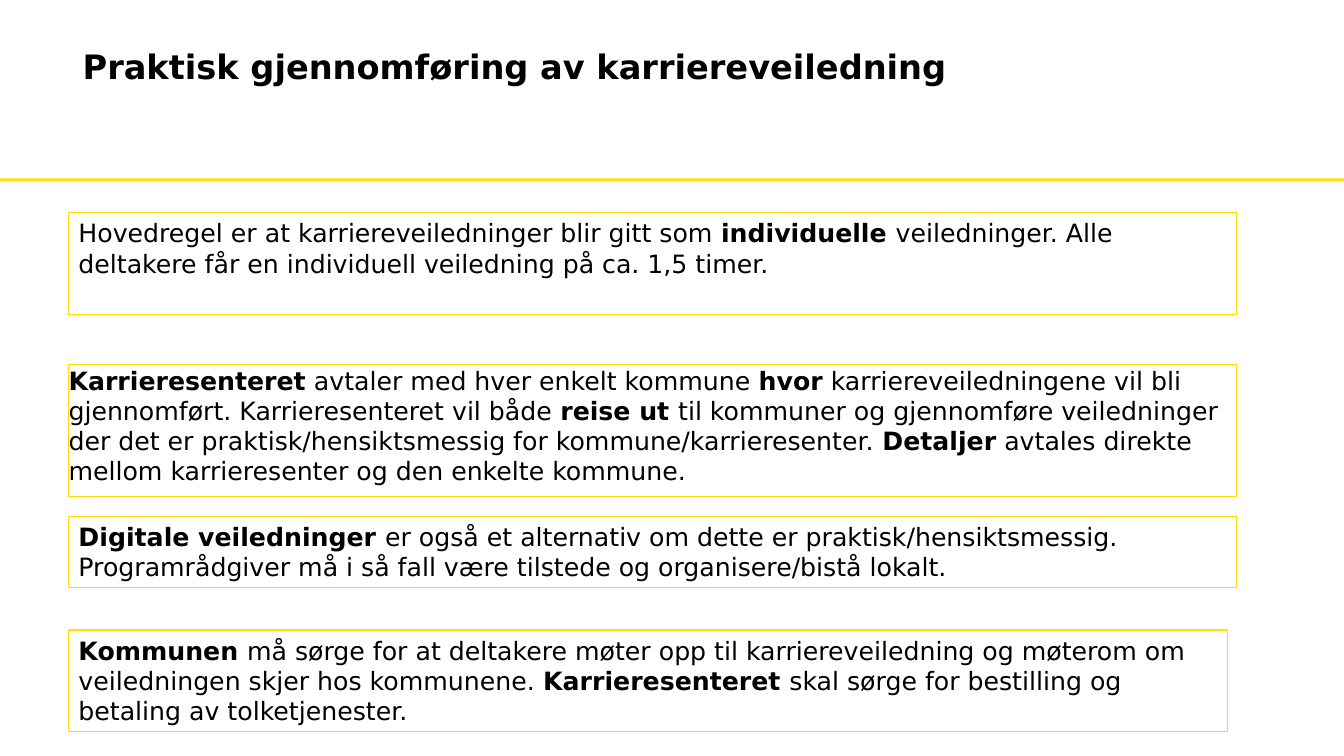
"""Builds the slide on how career guidance is carried out."""
from pptx import Presentation
from pptx.dml.color import RGBColor
from pptx.enum.shapes import MSO_SHAPE
from pptx.enum.text import MSO_ANCHOR, PP_ALIGN
from pptx.util import Inches, Pt

RECT = MSO_SHAPE.RECTANGLE
TOP = MSO_ANCHOR.TOP
LEFT = PP_ALIGN.LEFT
FONT = "DejaVu Sans"
YELLOW = "FFDD00"
BLACK = "000000"
BOX_LEFT = 0.68

# Each box: top, width, height, horizontal inset, vertical inset, (text, bold) runs
BOXES = [
    (2.11, 11.58, 1.01, 0.1, 0.05, [
        ("Hovedregel er at karriereveiledninger blir gitt som ", False),
        ("individuelle ", True),
        ("veiledninger. Alle deltakere får en individuell veiledning på "
         "ca. 1,5 timer.", False)]),
    (3.62, 11.58, 1.31, 0, 0, [
        ("Karrieresenteret", True),
        (" avtaler med hver enkelt kommune ", False),
        ("hvor", True),
        (" karriereveiledningene vil bli gjennomført. Karrieresenteret vil "
         "både ", False),
        ("reise ut ", True),
        ("til kommuner og gjennomføre veiledninger der det er "
         "praktisk/hensiktsmessig for kommune/karrieresenter. ", False),
        ("Detaljer", True),
        (" avtales direkte mellom karrieresenter og den enkelte kommune.",
         False)]),
    (5.12, 11.58, 0.71, 0.1, 0.05, [
        ("Digitale veiledninger ", True),
        ("er også et alternativ om dette er praktisk/hensiktsmessig. "
         "Programrådgiver må i så fall være tilstede og organisere/bistå "
         "lokalt.", False)]),
    (6.25, 11.49, 1.01, 0.1, 0.05, [
        ("Kommunen ", True),
        ("må sørge for at deltakere møter opp til karriereveiledning og "
         "møterom om veiledningen skjer hos kommunene. ", False),
        ("Karrieresenteret ", True),
        ("skal sørge for bestilling og betaling av tolketjenester.", False)]),
]


def rgb(value):
    """Return the colour for a hex string."""
    return RGBColor.from_string(value)


def set_frame(tf, inset_x, inset_y):
    """Wrap the text from the top with the given insets in inches."""
    tf.word_wrap = True
    tf.vertical_anchor = TOP
    tf.margin_left = tf.margin_right = Inches(inset_x)
    tf.margin_top = tf.margin_bottom = Inches(inset_y)


def set_font(p, size):
    """Left-align a paragraph and give it the slide's font."""
    p.alignment = LEFT
    p.font.name = FONT
    p.font.size = Pt(size)
    p.font.color.rgb = rgb(BLACK)


def add_rule(s):
    """Draw the yellow bar below the title."""
    sp = s.shapes.add_shape(RECT, 0, Inches(1.77), Inches(13.33), Inches(0.03))
    sp.shadow.inherit = False
    sp.fill.solid()
    sp.fill.fore_color.rgb = rgb(YELLOW)
    sp.line.fill.background()


def add_title(s, text):
    """Write the slide title."""
    sp = s.shapes.add_textbox(Inches(0.82), Inches(0.36), Inches(10.5), Inches(1.21))
    set_frame(sp.text_frame, 0, 0.14)
    p = sp.text_frame.paragraphs[0]
    p.text = text
    set_font(p, 24)
    p.font.bold = True
    p.line_spacing = 0.9


def add_box(s, top, width, height, inset_x, inset_y, runs):
    """Draw a yellow outlined box with partly bold text."""
    sp = s.shapes.add_shape(RECT, Inches(BOX_LEFT), Inches(top),
                            Inches(width), Inches(height))
    sp.shadow.inherit = False
    sp.fill.background()
    sp.line.color.rgb = rgb(YELLOW)
    sp.line.width = Pt(0.75)
    set_frame(sp.text_frame, inset_x, inset_y)
    p = sp.text_frame.paragraphs[0]
    set_font(p, 18)
    for text, bold in runs:
        r = p.add_run()
        r.text = text
        r.font.bold = bold


def main():
    """Build and save the slide."""
    prs = Presentation()
    prs.slide_width = Inches(13.33)
    prs.slide_height = Inches(7.5)
    s = prs.slides.add_slide(prs.slide_layouts[6])
    add_rule(s)
    add_title(s, "Praktisk gjennomføring av karriereveiledning")
    for box in BOXES:
        add_box(s, *box)
    prs.save("out.pptx")


if __name__ == "__main__":
    main()
